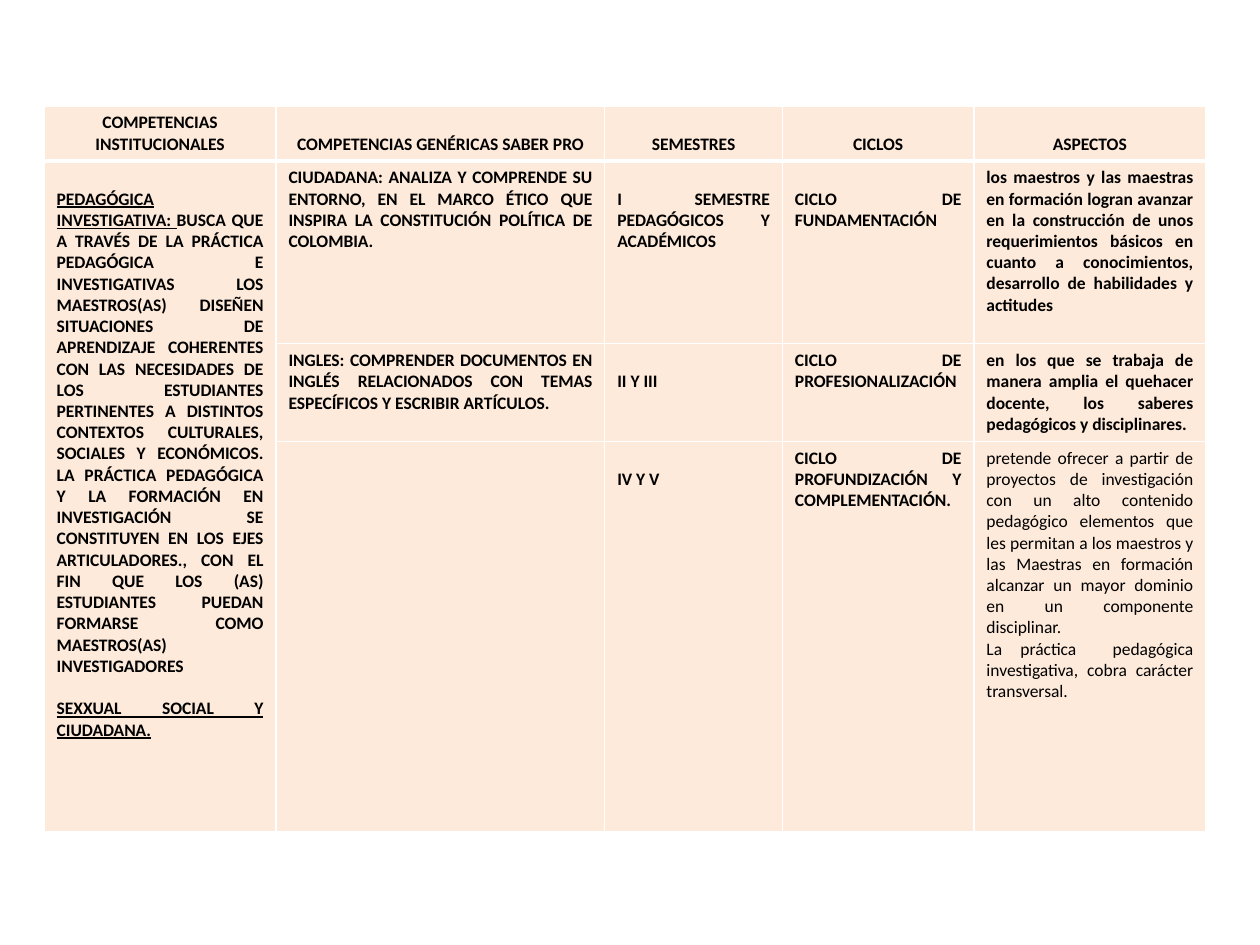
from lxml import etree
from pptx import Presentation
from pptx.dml.color import RGBColor
from pptx.enum.text import MSO_ANCHOR as Anchor, PP_ALIGN as Align
from pptx.oxml.ns import qn
from pptx.util import Inches, Pt

HEADERS = [
    "COMPETENCIAS INSTITUCIONALES",
    "COMPETENCIAS GENÉRICAS SABER PRO",
    "SEMESTRES",
    "CICLOS",
    "ASPECTOS",
]
INSTITUTIONAL = [
    ("PEDAGÓGICA INVESTIGATIVA: ", True),
    ("BUSCA QUE A TRAVÉS DE LA PRÁCTICA PEDAGÓGICA E INVESTIGATIVAS LOS "
     "MAESTROS(AS) DISEÑEN SITUACIONES DE APRENDIZAJE COHERENTES CON LAS "
     "NECESIDADES DE LOS ESTUDIANTES PERTINENTES A DISTINTOS CONTEXTOS "
     "CULTURALES, SOCIALES Y ECONÓMICOS. LA PRÁCTICA PEDAGÓGICA Y LA "
     "FORMACIÓN EN INVESTIGACIÓN SE CONSTITUYEN EN LOS EJES ARTICULADORES., "
     "CON EL FIN QUE LOS (AS) ESTUDIANTES PUEDAN FORMARSE COMO MAESTROS(AS) "
     "INVESTIGADORES", False),
]
SOCIAL = "SEXXUAL SOCIAL Y CIUDADANA."
ROWS = [
    ["CIUDADANA: ANALIZA Y COMPRENDE SU ENTORNO, EN EL MARCO ÉTICO QUE "
     "INSPIRA LA CONSTITUCIÓN POLÍTICA DE COLOMBIA. ",
     "I SEMESTRE PEDAGÓGICOS Y ACADÉMICOS",
     "CICLO DE FUNDAMENTACIÓN",
     "los maestros y las maestras en formación logran avanzar en la "
     "construcción de unos requerimientos básicos en cuanto a conocimientos, "
     "desarrollo de habilidades y actitudes"],
    ["INGLES: COMPRENDER DOCUMENTOS EN INGLÉS RELACIONADOS CON TEMAS "
     "ESPECÍFICOS Y ESCRIBIR ARTÍCULOS.",
     "II Y III",
     "CICLO DE PROFESIONALIZACIÓN",
     "en los que se trabaja de manera amplia el quehacer docente, los saberes "
     "pedagógicos y disciplinares."],
    ["",
     "IV Y V",
     "CICLO DE PROFUNDIZACIÓN Y COMPLEMENTACIÓN.",
     "pretende ofrecer a partir de proyectos de investigación con un alto "
     "contenido pedagógico elementos que les permitan a los maestros y las "
     "Maestras en formación alcanzar un mayor dominio en un componente "
     "disciplinar. \n"
     "La práctica  pedagógica investigativa, cobra carácter transversal."],
]
COLUMN_WIDTHS = [1.84, 2.61, 1.41, 1.52, 1.84]
ROW_HEIGHTS = [0.43, 1.45, 0.77, 3.1]
LOWERED_CELLS = {(1, 0), (1, 2), (1, 3), (2, 2), (3, 2)}
LOWERED_MARGIN = 0.22


def color(value):
    return RGBColor.from_string(value)


def set_borders(cell, widths):
    properties = cell._tc.get_or_add_tcPr()
    for index, (side, width) in enumerate(widths.items()):
        line = etree.Element(qn(f"a:ln{side}"), w=str(Pt(width)))
        fill = etree.SubElement(line, qn("a:solidFill"))
        etree.SubElement(fill, qn("a:srgbClr"), val="FFFFFF")
        properties.insert(index, line)


def format_text(text_frame, alignment, bold):
    for paragraph in text_frame.paragraphs:
        paragraph.alignment = alignment
        paragraph.font.size = Pt(10)
        for run in paragraph.runs:
            run.font.name = "Calibri"
            run.font.size = Pt(10)
            run.font.bold = bold
            run.font.color.rgb = color("000000")


def write_institutional(text_frame):
    opening = text_frame.paragraphs[0]
    closing = text_frame.add_paragraph()
    closing.space_before = Pt(12.2)
    for text, underlined in INSTITUTIONAL:
        run = opening.add_run()
        run.text = text
        run.font.underline = underlined
    closing.text = SOCIAL
    closing.runs[0].font.underline = True


def add_competency_table(slide, left, top, width, height):
    shape = slide.shapes.add_table(
        len(ROW_HEIGHTS), len(COLUMN_WIDTHS), left, top, width, height)
    table = shape.table
    for column, column_width in zip(table.columns, COLUMN_WIDTHS):
        column.width = Inches(column_width)
    for row, row_height in zip(table.rows, ROW_HEIGHTS):
        row.height = Inches(row_height)
    table.cell(1, 0).merge(table.cell(3, 0))

    contents = [HEADERS] + [[""] + row for row in ROWS]
    for row_index, texts in enumerate(contents):
        is_header = row_index == 0
        for column_index, text in enumerate(texts):
            cell = table.cell(row_index, column_index)
            cell.fill.solid()
            cell.fill.fore_color.rgb = color("FDEADA")
            set_borders(cell, {"L": 1, "R": 1,
                               "T": 3 if row_index == 1 else 1,
                               "B": 3 if is_header else 1})
            cell.vertical_anchor = Anchor.BOTTOM if is_header else Anchor.TOP
            if (row_index, column_index) in LOWERED_CELLS:
                cell.margin_top = Inches(LOWERED_MARGIN)
            if (row_index, column_index) == (1, 0):
                write_institutional(cell.text_frame)
            else:
                cell.text_frame.text = text
            format_text(cell.text_frame,
                        Align.CENTER if is_header else Align.JUSTIFY,
                        (row_index, column_index) != (3, 4))


def main():
    presentation = Presentation()
    presentation.slide_width = Inches(10)
    presentation.slide_height = Inches(7.5)
    slide = presentation.slides.add_slide(presentation.slide_layouts[6])
    add_competency_table(slide, Inches(0.35), Inches(0.84),
                         Inches(sum(COLUMN_WIDTHS)), Inches(sum(ROW_HEIGHTS)))
    presentation.save("out.pptx")


if __name__ == "__main__":
    main()
